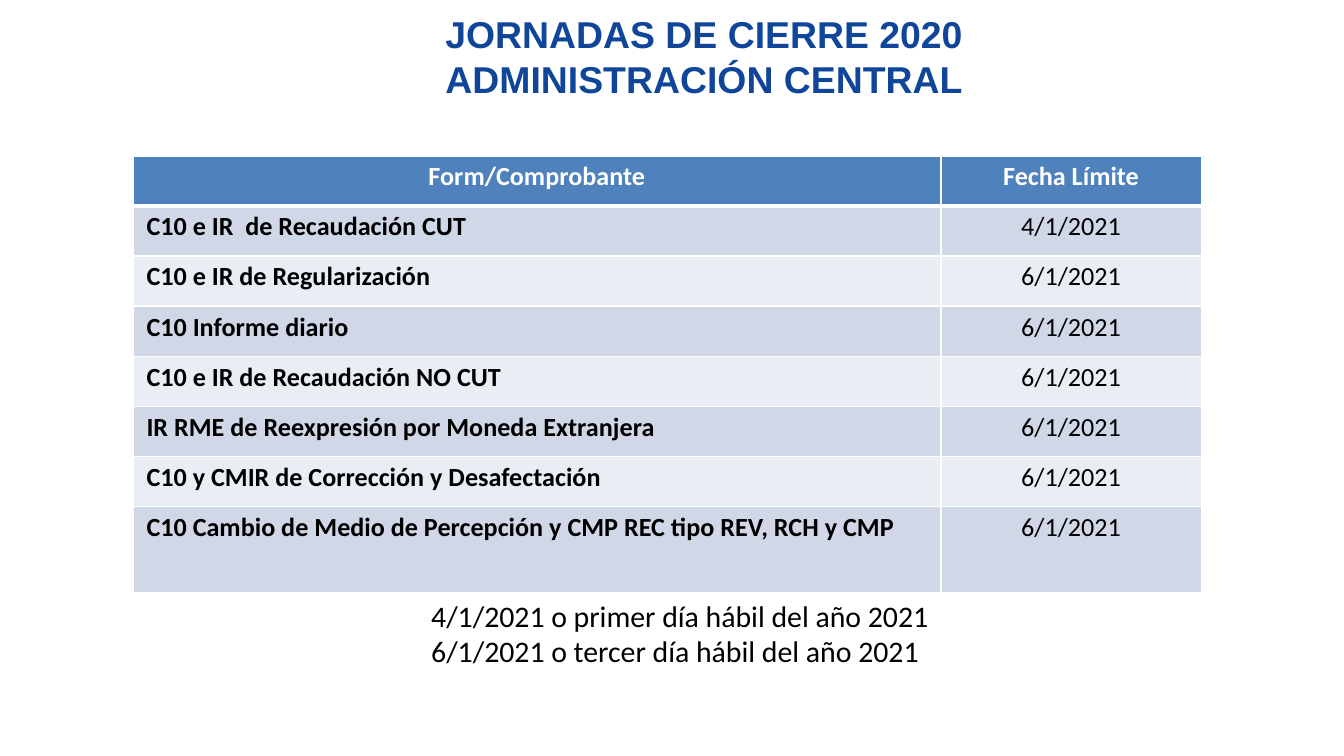
import pptx
import pptx.dml.color
import pptx.enum.text
import pptx.oxml
import pptx.oxml.ns
import pptx.util

Inches = pptx.util.Inches
ALIGN = pptx.enum.text.PP_ALIGN
ANCHOR = pptx.enum.text.MSO_ANCHOR
AUTO_SIZE = pptx.enum.text.MSO_AUTO_SIZE

SLIDE_WIDTH = 10
SLIDE_HEIGHT = SLIDE_WIDTH * 9 / 16
TITLE = ["JORNADAS DE CIERRE 2020", "ADMINISTRACIÓN CENTRAL"]
HEADINGS = ("Form/Comprobante", "Fecha Límite")
DEADLINES = [
    ("C10 e IR  de Recaudación CUT", "4/1/2021"),
    ("C10 e IR de Regularización", "6/1/2021"),
    ("C10 Informe diario", "6/1/2021"),
    ("C10 e IR de Recaudación NO CUT", "6/1/2021"),
    ("IR RME de Reexpresión por Moneda Extranjera", "6/1/2021"),
    ("C10 y CMIR de Corrección y Desafectación", "6/1/2021"),
    ("C10 Cambio de Medio de Percepción y CMP REC tipo REV, RCH y CMP", "6/1/2021"),
]
NOTES = [
    "4/1/2021 o primer día hábil del año 2021",
    "6/1/2021 o tercer día hábil del año 2021",
]
BANDS = ("D0D8E8", "E9EDF4")


def rgb(value):
    """Return the colour for a hex string."""
    return pptx.dml.color.RGBColor.from_string(value)


def apply(target, values):
    """Set every attribute in a dict of format values."""
    for name, value in values.items():
        setattr(target, name, value)


def write(paragraph, text, align, color, **font):
    """Fill a paragraph with one formatted run."""
    paragraph.alignment = align
    run = paragraph.add_run()
    run.text = text
    apply(run.font, font)
    run.font.color.rgb = rgb(color)


def add_lines(slide, box, lines, frame_format, align, color, tab=None, **font):
    """Place a text box with one paragraph for each line."""
    frame = slide.shapes.add_textbox(*map(Inches, box)).text_frame
    apply(frame, frame_format)
    for index, line in enumerate(lines):
        paragraph = frame.add_paragraph() if index else frame.paragraphs[0]
        if tab:
            stops = pptx.oxml.parse_xml(
                f'<a:tabLst {pptx.oxml.ns.nsdecls("a")}>'
                f'<a:tab pos="{Inches(tab)}" algn="l"/></a:tabLst>')
            paragraph._p.get_or_add_pPr().append(stops)
        write(paragraph, line, align, color, **font)


def add_title(slide, box):
    """Place the centred two-line title."""
    add_lines(slide, box, TITLE,
              {"word_wrap": True, "vertical_anchor": ANCHOR.MIDDLE},
              ALIGN.CENTER, "104699",
              name="Arial", size=pptx.util.Pt(20), bold=True)


def add_notes(slide, box):
    """Place the explanation of the two deadlines."""
    add_lines(slide, box, NOTES,
              {"word_wrap": False, "vertical_anchor": ANCHOR.MIDDLE,
               "auto_size": AUTO_SIZE.SHAPE_TO_FIT_TEXT},
              ALIGN.JUSTIFY, "000000", tab=0.49,
              name="Calibri", size=pptx.util.Pt(16), bold=False)


def border_cell(cell, widths):
    """Draw white cell borders from a dict of side and width in points."""
    properties = cell._tc.get_or_add_tcPr()
    for index, (side, width) in enumerate(widths.items()):
        line = pptx.oxml.parse_xml(
            f'<a:ln{side} {pptx.oxml.ns.nsdecls("a")} w="{pptx.util.Pt(width)}">'
            '<a:solidFill><a:srgbClr val="FFFFFF"/></a:solidFill>'
            f'</a:ln{side}>')
        properties.insert(index, line)


def add_deadlines(slide, box, date_width=1.94, last_height=0.64):
    """Place the table of forms and their deadlines."""
    rows = [HEADINGS, *DEADLINES]
    table = slide.shapes.add_table(len(rows), 2, *map(Inches, box)).table
    table.columns[0].width = Inches(box[2] - date_width)
    table.columns[1].width = Inches(date_width)
    row_height = (box[3] - last_height) / (len(rows) - 1)
    margins = {
        "margin_left": Inches(0.1), "margin_right": Inches(0.1),
        "margin_top": pptx.util.Pt(2.7), "margin_bottom": pptx.util.Pt(2.7),
    }
    for row, texts in enumerate(rows):
        is_last = row == len(rows) - 1
        table.rows[row].height = Inches(last_height if is_last else row_height)
        is_heading = row == 0
        for column, text in enumerate(texts):
            cell = table.cell(row, column)
            apply(cell, margins)
            cell.fill.solid()
            cell.fill.fore_color.rgb = rgb(
                "4F81BD" if is_heading else BANDS[(row - 1) % 2])
            border_cell(cell, {"L": 1, "R": 1, "T": 3 if row == 1 else 1,
                               "B": 3 if is_heading else 1})
            is_form = column == 0
            write(cell.text_frame.paragraphs[0], text,
                  ALIGN.LEFT if is_form and not is_heading else ALIGN.CENTER,
                  "FFFFFF" if is_heading else "000000",
                  name="Calibri", size=pptx.util.Pt(14),
                  bold=is_heading or is_form)


def main():
    """Build and save the slide."""
    deck = pptx.Presentation()
    apply(deck, {"slide_width": Inches(SLIDE_WIDTH),
                 "slide_height": Inches(SLIDE_HEIGHT)})
    slide = deck.slides.add_slide(deck.slide_layouts[6])
    add_title(slide, (1.46, 0.06, 7.56, 0.71))
    add_notes(slide, (3.11, 4.39, 3.95, 0.64))
    add_deadlines(slide, (0.99, 1.16, 7.95, 3.25))
    deck.save("out.pptx")


if __name__ == "__main__":
    main()
